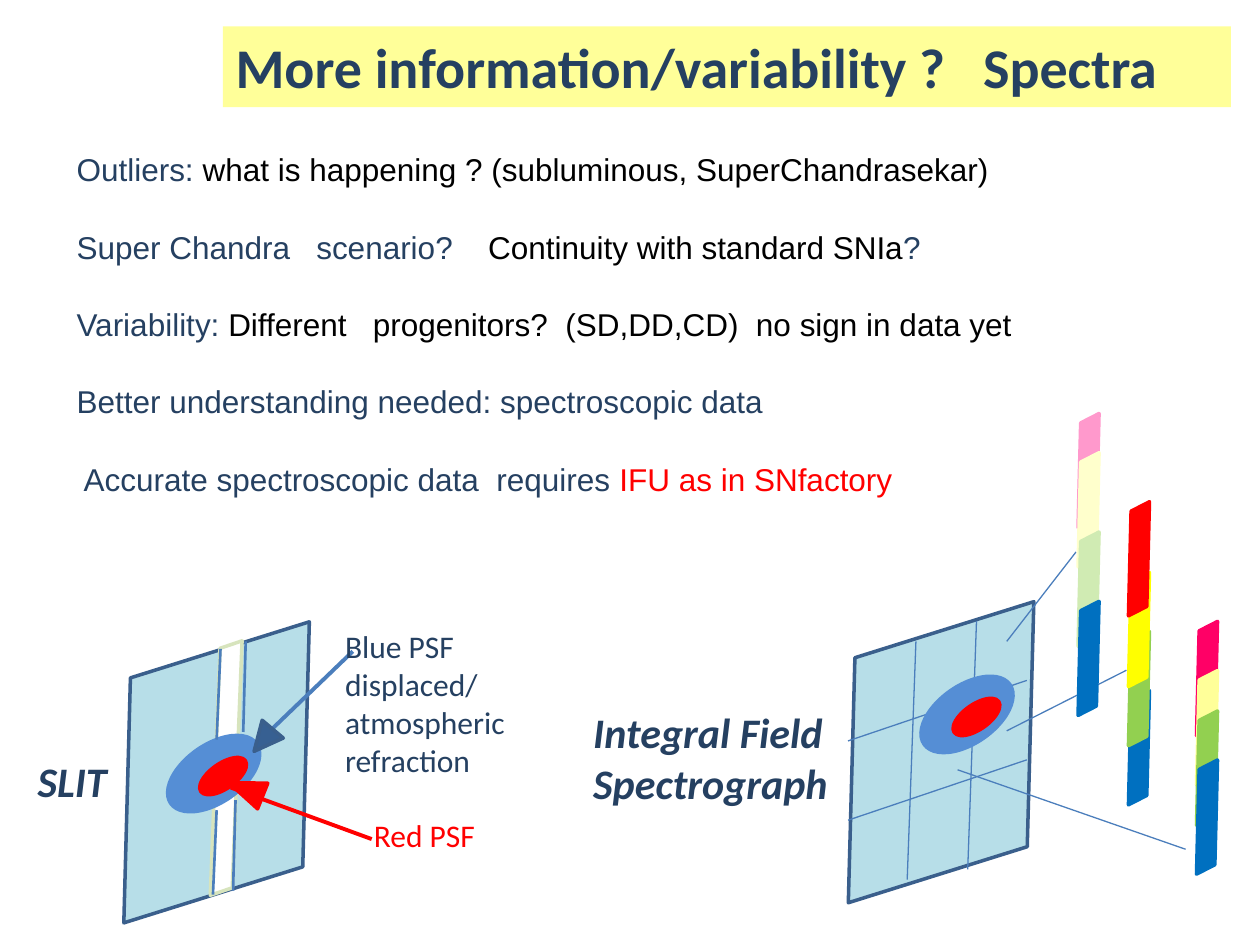
from lxml import etree
from pptx import Presentation
from pptx.dml.color import RGBColor
from pptx.enum.shapes import MSO_CONNECTOR, MSO_SHAPE
from pptx.enum.text import MSO_ANCHOR, MSO_AUTO_SIZE, PP_ALIGN
from pptx.oxml.ns import qn
from pptx.util import Pt

STRAIGHT = MSO_CONNECTOR.STRAIGHT
PARALLELOGRAM = MSO_SHAPE.PARALLELOGRAM
ELLIPSE = MSO_SHAPE.OVAL
TRIANGLE = MSO_SHAPE.ISOSCELES_TRIANGLE

NAVY = RGBColor(0x25, 0x40, 0x61)
BLACK = RGBColor(0, 0, 0)
WHITE = RGBColor(0xFF, 0xFF, 0xFF)
RED = RGBColor(0xFF, 0, 0)
PALE_YELLOW = RGBColor(0xFF, 0xFF, 0x99)
PLATE_BLUE = RGBColor(0xB7, 0xDE, 0xE8)
EDGE_BLUE = RGBColor(0x3A, 0x5F, 0x8C)
LINE_BLUE = RGBColor(0x4B, 0x7E, 0xBC)
PSF_BLUE = RGBColor(0x55, 0x8E, 0xD5)
ARROW_BLUE = RGBColor(0x37, 0x60, 0x92)
SLIT_EDGE = RGBColor(0xD7, 0xE4, 0xBD)
PINK = RGBColor(0xFF, 0x99, 0xCC)
CREAM = RGBColor(0xFF, 0xFF, 0xCC)
PALE_GREEN = RGBColor(0xD0, 0xEB, 0xB3)
GREEN = RGBColor(0x92, 0xD0, 0x50)
BLUE = RGBColor(0, 0x70, 0xC0)
YELLOW = RGBColor(0xFF, 0xFF, 0)
MAGENTA = RGBColor(0xFF, 0, 0x66)

TITLE = "More information/variability ?   Spectra"
POINTS = [
    [("Outliers: ", NAVY),
     ("what is happening ? (subluminous, SuperChandrasekar)", BLACK)],
    [("Super Chandra   scenario?    ", NAVY),
     ("Continuity with standard SNIa", BLACK), ("?", NAVY)],
    [("Variability: ", NAVY),
     ("Different   progenitors?  (SD,DD,CD)  no sign in data yet", BLACK)],
    [("Better understanding needed: spectroscopic data", NAVY)],
    [(" Accurate spectroscopic data  requires ", NAVY),
     ("IFU as in SNfactory", RED)],
]
LABELS = [
    (["Blue PSF", "displaced/", "atmospheric", "refraction"],
     (190.1, 355, 106.6, 94.3), 18, NAVY, False),
    (["Red PSF"], (206.6, 463, 72.7, 28.8), 18, RED, False),
    (["SLIT"], (14.4, 428.4, 54.7, 36), 24, NAVY, True),
    (["Integral Field", "Spectrograph"], (331.9, 400.3, 154.8, 65.5), 24, NAVY, True),
]
SLIT_EDGES = [(126, 370.8, 123.8, 422.6), (123.8, 463, 121.7, 511.2),
              (140.4, 366.5, 139, 418.3), (134.6, 457.2, 133.2, 509)]
FIELD_GRID = [(484.6, 423.4, 586.8, 388.8), (484.6, 468.7, 586.8, 434.2),
              (523.4, 366.5, 518.4, 502.6), (558, 355, 553, 496.8)]
LIGHT_PATHS = [(575.3, 366.5, 614.9, 315.4), (575.3, 417.6, 643.7, 383),
               (547.2, 439.9, 677.5, 485.3)]
SPECTRA = [
    (601.9, [(242.6, PINK), (265, CREAM), (310.3, PALE_GREEN), (349.9, BLUE)]),
    (630.7, [(401, BLUE), (367.2, GREEN), (333.4, YELLOW), (293, RED)]),
    (669.6, [(361.4, MAGENTA), (389.5, PALE_YELLOW), (412.6, GREEN), (440.6, BLUE)]),
]


def add_figure(slide, preset, box, rotation, fill, edge, skew=None):
    """Add a filled preset shape with a 2 pt outline."""
    figure = slide.shapes.add_shape(preset, *map(Pt, box))
    figure.shadow.inherit = False
    figure.rotation = rotation
    if skew is not None:
        figure.adjustments[0] = skew
    figure.fill.solid()
    figure.fill.fore_color.rgb = fill
    figure.line.color.rgb = edge
    figure.line.width = Pt(2)


def add_line(slide, ends, color, width):
    """Add a straight line without a shadow."""
    line = slide.shapes.add_connector(STRAIGHT, *map(Pt, ends))
    line.line.color.rgb = color
    line.line.width = Pt(width)
    etree.SubElement(line._element.spPr, qn("a:effectLst"))


def add_plate(slide, left, top):
    """Add a tilted focal plate."""
    add_figure(slide, PARALLELOGRAM, (left, top, 152.6, 132.5), 342.6,
               PLATE_BLUE, EDGE_BLUE, 0.343)


def add_psf(slide, left, top):
    """Add a blue PSF with the red one inside it."""
    add_figure(slide, ELLIPSE, (left, top, 59.8, 33.1), 325.2, PSF_BLUE, PSF_BLUE)
    add_figure(slide, ELLIPSE, (left + 19.8, top + 10.8, 31, 14.4), 325.2, RED, RED)


def add_title(slide):
    """Fill and format the title placeholder."""
    title = slide.shapes.title
    title.left, title.top, title.width, title.height = map(Pt, (127.4, 15.1, 576, 46.1))
    title.fill.solid()
    title.fill.fore_color.rgb = PALE_YELLOW
    frame = title.text_frame
    frame.text = TITLE
    frame.auto_size = MSO_AUTO_SIZE.NONE
    frame.vertical_anchor = MSO_ANCHOR.TOP
    paragraph = frame.paragraphs[0]
    paragraph.alignment = PP_ALIGN.LEFT
    set_font(paragraph, "Calibri", 32, NAVY, bold=True)


def set_font(paragraph, name, size, color, bold=False, italic=False):
    """Set the font of a whole paragraph."""
    font = paragraph.font
    font.name, font.size, font.bold, font.italic = name, Pt(size), bold, italic
    font.color.rgb = color


def add_points(slide):
    """Add the spaced statements in mixed colours."""
    frame = slide.shapes.add_textbox(*map(Pt, (36.7, 60.5, 640.8, 290.9))).text_frame
    frame.word_wrap = True
    frame.margin_top = Pt(25.5)
    for index, parts in enumerate(POINTS):
        paragraph = frame.add_paragraph() if index else frame.paragraphs[0]
        paragraph.font.name, paragraph.font.size = "Arial", Pt(18)
        paragraph.space_after = Pt(22.6)
        for text, color in parts:
            run = paragraph.add_run()
            run.text = text
            run.font.color.rgb = color


def add_label(slide, lines, box, size, color, emphasis):
    """Add an unwrapped label, one paragraph a line."""
    frame = slide.shapes.add_textbox(*map(Pt, box)).text_frame
    frame.word_wrap = False
    frame.text = "\n".join(lines)
    for paragraph in frame.paragraphs:
        set_font(paragraph, "Calibri", size, color, emphasis, emphasis)


def add_slit(slide):
    """Draw the slit with its displaced PSF and pointers."""
    add_plate(slide, 47.5, 375.1)
    add_figure(slide, PARALLELOGRAM, (97.2, 373, 64.1, 131.8), 341.2,
               WHITE, SLIT_EDGE, 0.793)
    add_psf(slide, 92.2, 425.5)
    for ends in SLIT_EDGES:
        add_line(slide, ends, LINE_BLUE, 1.5)
    add_line(slide, (201.6, 372.2, 146.2, 425.5), LINE_BLUE, 2.25)
    add_figure(slide, TRIANGLE, (142.6, 414.7, 15.8, 16.6), 220.1, ARROW_BLUE, EDGE_BLUE)
    add_line(slide, (131.8, 450, 212.4, 479.5), RED, 2.25)
    add_figure(slide, TRIANGLE, (132.5, 440.6, 15.8, 20.9), 291.5, RED, RED)


def add_field(slide):
    """Draw the integral field and the spectra it yields."""
    add_plate(slide, 461.5, 363.6)
    for ends in FIELD_GRID:
        add_line(slide, ends, LINE_BLUE, 0.75)
    add_psf(slide, 522.7, 391.7)
    for ends in LIGHT_PATHS:
        add_line(slide, ends, LINE_BLUE, 0.75)
    for left, bands in SPECTRA:
        for top, color in bands:
            add_figure(slide, PARALLELOGRAM, (left, top, 40.3, 52.6), 333,
                       color, color, 0.707)


def main():
    """Build the slide on spectra."""
    deck = Presentation()
    deck.slide_width, deck.slide_height = Pt(720), Pt(540)
    slide = deck.slides.add_slide(deck.slide_layouts[5])
    add_title(slide)
    add_points(slide)
    add_slit(slide)
    add_field(slide)
    for label in LABELS:
        add_label(slide, *label)
    deck.save("out.pptx")


if __name__ == "__main__":
    main()
